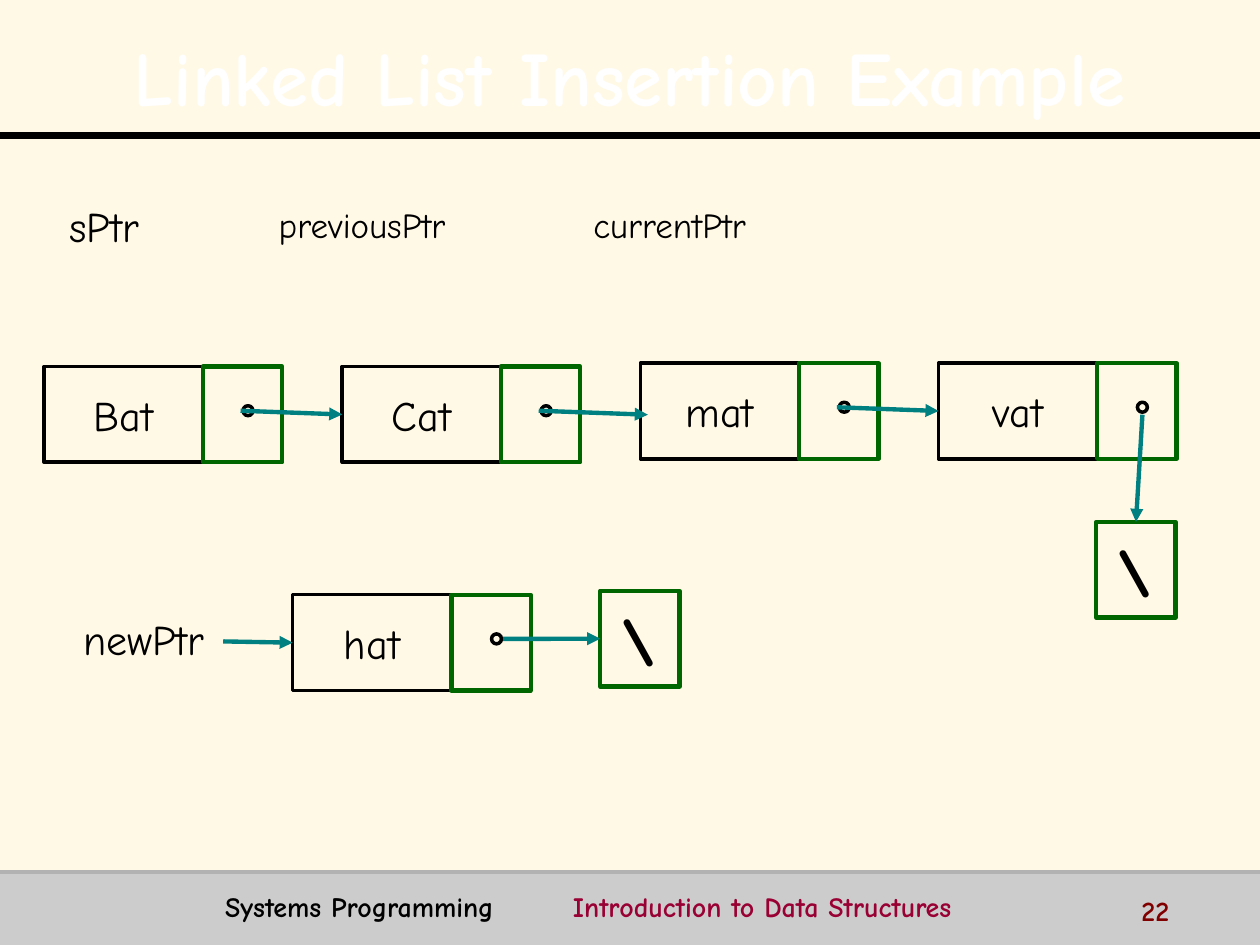
from lxml.etree import SubElement
from pptx import Presentation
from pptx.dml.color import RGBColor
from pptx.enum.shapes import MSO_CONNECTOR, MSO_SHAPE
from pptx.enum.text import MSO_ANCHOR, PP_ALIGN
from pptx.oxml import parse_xml
from pptx.oxml.ns import nsdecls, qn
from pptx.util import Cm, Pt

COLORS = {
    "background": "FFF9E6",
    "footer": "CCCCCC",
    "footer_rule": "B2B2B2",
    "black": "000000",
    "white": "FFFFFF",
    "pointer": "006600",
    "arrow": "008080",
    "subject": "990033",
    "number": "800000",
}
FONT = "Comic Neue"
DATA_WIDTH, POINTER_WIDTH, NODE_HEIGHT = 3.2, 1.6, 1.93
NODE_PITCH = 6.01
DOT_LEFT, DOT_TOP, DOT_SIZE = 4.01, 0.79, 0.2
LINK_LEFT, LINK_TOP = 3.96, 0.89


def color(name):
    return RGBColor.from_string(COLORS[name])


def write_text(shape, *runs, size=24, bold=False, align=PP_ALIGN.CENTER,
               anchor=MSO_ANCHOR.MIDDLE, wrap=False, spacing=None, tab=None):
    frame = shape.text_frame
    frame.word_wrap = wrap
    frame.vertical_anchor = anchor
    paragraph = frame.paragraphs[0]
    if tab is not None:
        tabs = SubElement(paragraph._p.get_or_add_pPr(), qn("a:tabLst"))
        SubElement(tabs, qn("a:tab"), pos=str(Cm(tab)), algn="l")
    paragraph.alignment = align
    if spacing is not None:
        paragraph.line_spacing = spacing
    for text, color_name in runs:
        run = paragraph.add_run()
        run.text = text
        run.font.name = FONT
        run.font.size = Pt(size)
        run.font.bold = bold
        run.font.color.rgb = color(color_name)
    return paragraph


def add_text(slide, left, top, width, height, *runs, **text_format):
    box = slide.shapes.add_textbox(Cm(left), Cm(top), Cm(width), Cm(height))
    return write_text(box, *runs, **text_format)


def add_outline(slide, left, top, width, height, line="black", weight=2,
                kind=MSO_SHAPE.RECTANGLE):
    shape = slide.shapes.add_shape(kind, Cm(left), Cm(top), Cm(width), Cm(height))
    shape.shadow.inherit = False
    shape.fill.background()
    shape.line.color.rgb = color(line)
    shape.line.width = Pt(weight)
    return shape


def add_line(slide, start, end, line, weight):
    connector = slide.shapes.add_connector(
        MSO_CONNECTOR.STRAIGHT, *(Cm(value) for value in (*start, *end)))
    connector.line.color.rgb = color(line)
    connector.line.width = Pt(weight)
    SubElement(connector._element.spPr, qn("a:effectLst"))
    return connector


def add_arrow(slide, start, end=(0, 0), target=None, side=1):
    arrow = add_line(slide, start, end, "arrow", 2.5)
    SubElement(arrow.line._get_or_add_ln(), qn("a:tailEnd"), type="triangle")
    if target is not None:
        arrow.end_connect(target, side)


def add_node(slide, left, top, word):
    data = add_outline(slide, left, top, DATA_WIDTH, NODE_HEIGHT)
    write_text(data, (word, "black"))
    add_outline(slide, left + DATA_WIDTH, top, POINTER_WIDTH, NODE_HEIGHT, "pointer", 2.5)
    add_outline(slide, left + DOT_LEFT, top + DOT_TOP, DOT_SIZE, DOT_SIZE,
                kind=MSO_SHAPE.OVAL)
    return data


def add_null(slide, left, top):
    box = add_outline(slide, left, top, POINTER_WIDTH, NODE_HEIGHT, "pointer", 2.5)
    write_text(box, ("\\", "black"), size=40, bold=True)
    return box


def add_header(slide, left, top, width):
    add_line(slide, (left, top + 2.74), (left + width, top + 2.74), "black", 4)
    paragraph = add_text(slide, left + 0.5, top + 0.33, width - 1, 2.21,
                         ("Linked List Insertion Example", "white"),
                         size=44, bold=True, wrap=True, spacing=1.1)
    properties = paragraph.runs[0].font._element
    properties.find(qn("a:solidFill")).addnext(parse_xml(
        f'<a:effectLst {nsdecls("a")}><a:outerShdw dist="35921" dir="2700000">'
        f'<a:srgbClr val="{COLORS["black"]}"/></a:outerShdw></a:effectLst>'))


def add_pointer_labels(slide, left, top):
    add_text(slide, left, top, DATA_WIDTH, NODE_HEIGHT, ("sPtr", "black"))
    for offset, name in ((4.6, "previousPtr"), (10.8, "currentPtr")):
        add_text(slide, left + offset, top + 0.15, 4.4, 1.6, (name, "black"), size=20)


def add_list(slide, left, top):
    words = (("Bat", 0.07), ("Cat", 0.07), ("mat", 0), ("vat", 0))
    places = [(left + index * NODE_PITCH, top + drop)
              for index, (_, drop) in enumerate(words)]
    nodes = [add_node(slide, *place, word)
             for place, (word, _) in zip(places, words)]
    starts = [(x + LINK_LEFT, y + LINK_TOP) for x, y in places]
    add_arrow(slide, starts[0], target=nodes[1])
    add_arrow(slide, starts[1], end=(left + 12.17, top + 1.04))
    add_arrow(slide, starts[2], target=nodes[3])
    null = add_null(slide, left + 21.21, top + 3.2)
    add_arrow(slide, (places[3][0] + 4.11, top + 1.04), target=null, side=0)


def add_new_node(slide, left, top):
    add_text(slide, left, top, DATA_WIDTH, NODE_HEIGHT, ("newPtr", "black"))
    node_left, node_top = left + 4.6, top + 0.08
    node = add_node(slide, node_left, node_top, "hat")
    null = add_null(slide, left + 10.8, top)
    add_arrow(slide, (left + 3.2, top + 1.02), target=node)
    add_arrow(slide, (node_left + 4.24, node_top + LINK_TOP), target=null)


def add_footer(slide, left, top, width, height):
    band = add_outline(slide, left, top, width, height)
    band.fill.solid()
    band.fill.fore_color.rgb = color("footer")
    band.line.fill.background()
    add_line(slide, (left, top), (left + width, top), "footer_rule", 2)
    footer_format = dict(size=16, bold=True, align=PP_ALIGN.LEFT,
                         anchor=MSO_ANCHOR.TOP, wrap=True)
    add_text(slide, left + 4.29, top + 0.23, 18.59, 1.12,
             ("Systems Programming\t", "black"),
             ("Introduction to Data Structures", "subject"), tab=7.01, **footer_format)
    add_text(slide, left + 22.76, top + 0.3, 2.54, 0.64, ("22", "number"), **footer_format)


def main():
    presentation = Presentation()
    presentation.slide_width, presentation.slide_height = Cm(25.4), Cm(19.05)
    slide = presentation.slides.add_slide(presentation.slide_layouts[6])
    slide.background.fill.solid()
    slide.background.fill.fore_color.rgb = color("background")
    add_footer(slide, 0, 17.58, 25.4, 1.47)
    add_header(slide, 0, 0, 25.4)
    add_pointer_labels(slide, 0.5, 3.58)
    add_list(slide, 0.89, 7.32)
    add_new_node(slide, 1.3, 11.91)
    presentation.save("out.pptx")


if __name__ == "__main__":
    main()
